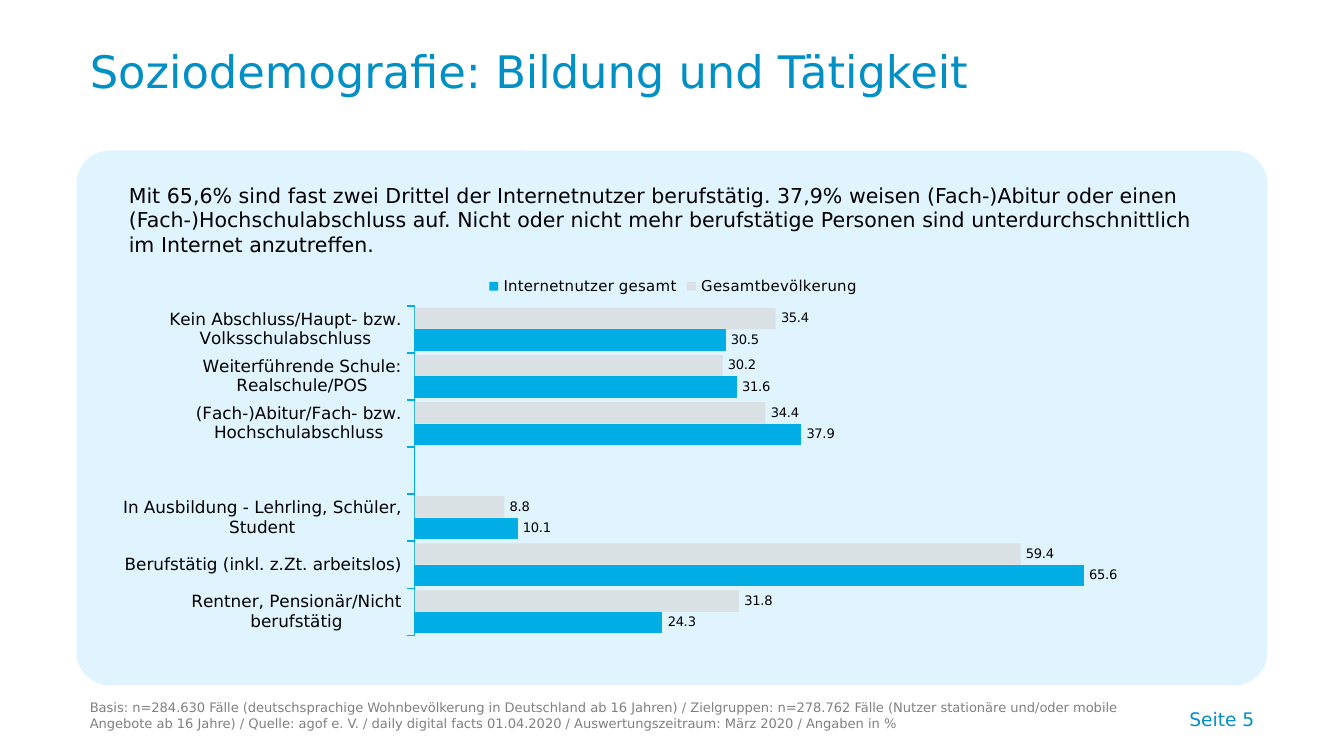
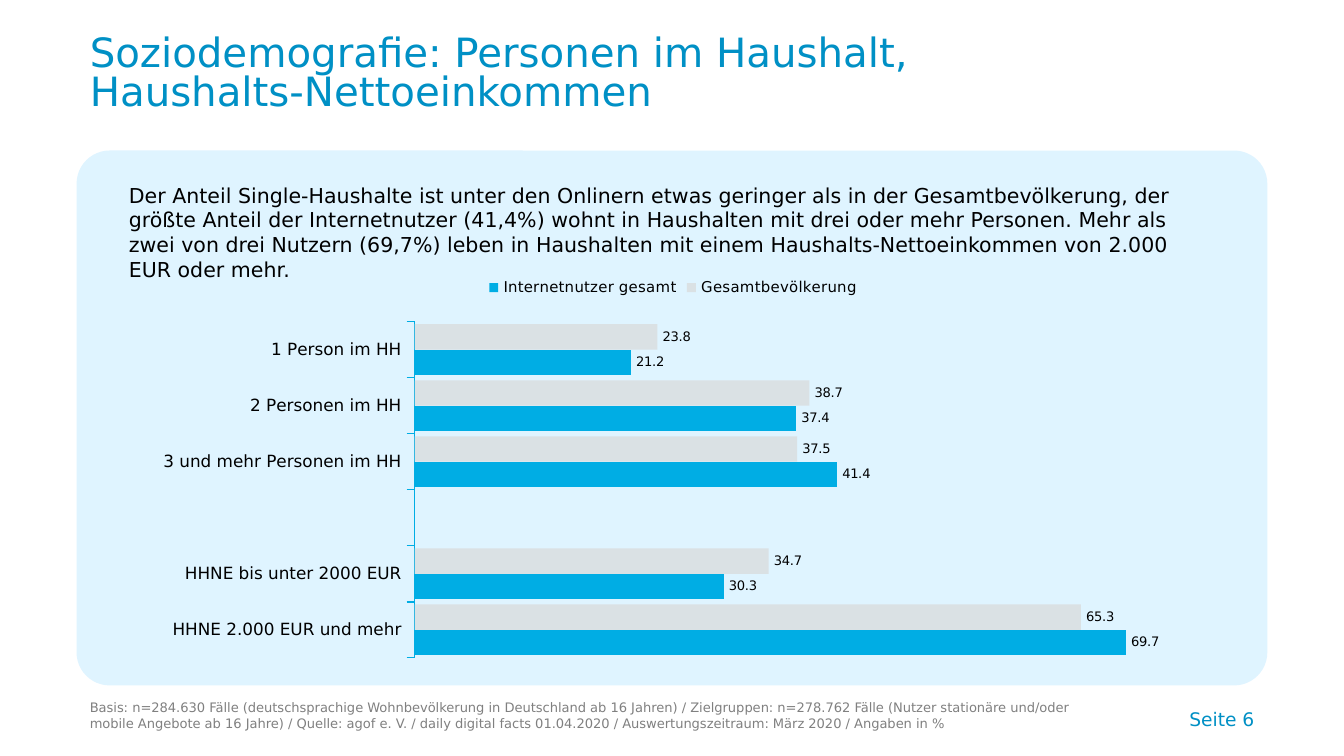
"""Build two slides on the demographics of internet users."""
from dataclasses import dataclass

from lxml.etree import SubElement
from pptx import Presentation
from pptx.chart.data import CategoryChartData
from pptx.dml.color import RGBColor
from pptx.enum.chart import XL_CHART_TYPE, XL_LABEL_POSITION, XL_LEGEND_POSITION, XL_TICK_MARK
from pptx.enum.shapes import MSO_SHAPE
from pptx.enum.text import MSO_ANCHOR, PP_ALIGN
from pptx.oxml import parse_xml
from pptx.oxml.ns import nsdecls, qn
from pptx.util import Inches, Pt


@dataclass(frozen=True)
class Theme:
    font: str = "DejaVu Sans"
    title: RGBColor = RGBColor(0x00, 0x90, 0xC5)
    panel: RGBColor = RGBColor(0xDF, 0xF4, 0xFF)
    ink: RGBColor = RGBColor(0x00, 0x00, 0x00)
    note: RGBColor = RGBColor(0x80, 0x80, 0x80)
    users: RGBColor = RGBColor(0x00, 0xAD, 0xE4)
    people: RGBColor = RGBColor(0xD9, 0xD9, 0xD9)
    body_size: float = 11
    page_size: float = 10
    axis_size: float = 9
    key_size: float = 8
    small_size: float = 7


theme = Theme()
num_fmt = "#,##0.0"
basis = (
    "Basis: n=284.630 Fälle (deutschsprachige Wohnbevölkerung in Deutschland ab 16 Jahren) / "
    "Zielgruppen: n=278.762 Fälle (Nutzer stationäre und/oder mobile Angebote ab 16 Jahre) / "
    "Quelle: agof e. V. / daily digital facts 01.04.2020 / Auswertungszeitraum: März 2020 / Angaben in %"
)
pages = [
    {
        "page": 5,
        "title": "Soziodemografie: Bildung und Tätigkeit",
        "size": 24,
        "body": "Mit 65,6% sind fast zwei Drittel der Internetnutzer berufstätig. 37,9% weisen "
                "(Fach-)Abitur oder einen (Fach-)Hochschulabschluss auf. Nicht oder nicht mehr "
                "berufstätige Personen sind unterdurchschnittlich im Internet anzutreffen.",
        "deep": 0.64,
        "wide": 7.88,
        "top": 1.95,
        "tall": 3.02,
        "plot": (0.268, 0.108, 0.732, 0.812),
        "rows": [
            ("Kein Abschluss/Haupt- bzw. Volksschulabschluss", 35.4, 30.5),
            ("Weiterführende Schule: Realschule/POS", 30.2, 31.6),
            ("(Fach-)Abitur/Fach- bzw. Hochschulabschluss", 34.4, 37.9),
            ("", None, None),
            ("In Ausbildung - Lehrling, Schüler, Student", 8.8, 10.1),
            ("Berufstätig (inkl. z.Zt. arbeitslos)", 59.4, 65.6),
            ("Rentner, Pensionär/Nicht berufstätig", 31.8, 24.3),
        ],
    },
    {
        "page": 6,
        "title": "Soziodemografie: Personen im Haushalt, Haushalts-Nettoeinkommen",
        "size": 21.6,
        "body": "Der Anteil Single-Haushalte ist unter den Onlinern etwas geringer als in der "
                "Gesamtbevölkerung, der größte Anteil der Internetnutzer (41,4%) wohnt in "
                "Haushalten mit drei oder mehr Personen. Mehr als zwei von drei Nutzern (69,7%) "
                "leben in Haushalten mit einem Haushalts-Nettoeinkommen von 2.000 EUR oder mehr.",
        "deep": 3.58,
        "wide": 7.74,
        "top": 1.96,
        "tall": 2.94,
        "plot": (0.268, 0.148, 0.732, 0.852),
        "rows": [
            ("1 Person im HH", 23.8, 21.2),
            ("2 Personen im HH", 38.7, 37.4),
            ("3 und mehr Personen im HH", 37.5, 41.4),
            ("", None, None),
            ("HHNE bis unter 2000 EUR", 34.7, 30.3),
            ("HHNE 2.000 EUR und mehr", 65.3, 69.7),
        ],
    },
]


def add_text(slide, box, text, size, color, anchor=MSO_ANCHOR.TOP, align=PP_ALIGN.LEFT):
    frame = slide.shapes.add_textbox(*map(Inches, box)).text_frame
    frame.word_wrap = True
    frame.vertical_anchor = anchor
    frame.text = text
    para = frame.paragraphs[0]
    para.alignment = align
    font = para.runs[0].font
    font.name, font.size = theme.font, Pt(size)
    font.color.rgb = color
    return para


def add_bars(slide, page):
    names, people, users = zip(*page["rows"])
    data = CategoryChartData(number_format=num_fmt)
    data.categories = names
    data.add_series("Gesamtbevölkerung", people)
    data.add_series("Internetnutzer gesamt", users)
    box = map(Inches, (0.86, page["top"], 8.3, page["tall"]))
    chart = slide.shapes.add_chart(XL_CHART_TYPE.BAR_CLUSTERED, *box, data).chart
    chart.has_title = False
    chart.font.name, chart.font.size = theme.font, Pt(theme.axis_size)
    chart.font.color.rgb = theme.ink

    chart.has_legend = True
    chart.legend.position = XL_LEGEND_POSITION.TOP
    chart.legend.include_in_layout = False
    chart.legend.font.size = Pt(theme.key_size)

    axis = chart.category_axis
    axis.reverse_order = True
    axis.major_tick_mark = XL_TICK_MARK.OUTSIDE
    axis.minor_tick_mark = XL_TICK_MARK.NONE
    axis.tick_labels.number_format = "@"
    axis.format.line.color.rgb = theme.users
    axis.format.line.width = Pt(0.75)
    scale = chart.value_axis
    scale.minimum_scale, scale.maximum_scale = 0, 80
    scale.has_major_gridlines = False
    scale.tick_labels.number_format = num_fmt
    scale.visible = False

    plot = chart.plots[0]
    plot.gap_width, plot.overlap = 20, 0
    plot.vary_by_categories = False
    for series, color in zip(plot.series, (theme.people, theme.users)):
        series.invert_if_negative = False
        series.format.fill.solid()
        series.format.fill.fore_color.rgb = color
        labels = series.data_labels
        labels.show_value = True
        labels.number_format, labels.number_format_is_linked = num_fmt, False
        labels.position = XL_LABEL_POSITION.OUTSIDE_END
        labels.font.size = Pt(theme.small_size)
    tint = next(plot.series[0].format.fill._xPr.iter(qn("a:srgbClr")))
    SubElement(tint, qn("a:alpha"), val="70000")

    area = chart._chartSpace.chart.plotArea
    for old in area.findall(qn("c:layout")):
        area.remove(old)
    layout = parse_xml(f"<c:layout {nsdecls('c')}><c:manualLayout/></c:layout>")
    parts = [("layoutTarget", "inner"), ("xMode", "edge"), ("yMode", "edge")]
    parts += zip("xywh", map(str, page["plot"]))
    for tag, val in parts:
        SubElement(layout[0], qn(f"c:{tag}"), val=val)
    area.insert(0, layout)


deck = Presentation()
deck.slide_width = Inches(10)
deck.slide_height = deck.slide_width * 9 // 16

for page in pages:
    slide = deck.slides.add_slide(deck.slide_layouts[6])
    panel = slide.shapes.add_shape(
        MSO_SHAPE.ROUNDED_RECTANGLE, *map(Inches, (0.57, 1.12, 8.86, 3.98)))
    panel.adjustments[0] = 0.062
    panel.shadow.inherit = False
    panel.fill.solid()
    panel.fill.fore_color.rgb = theme.panel
    panel.line.fill.background()

    add_text(slide, (6.54, 5.1, 2.89, 0.38), f"Seite {page['page']}", theme.page_size,
             theme.title, MSO_ANCHOR.BOTTOM, PP_ALIGN.RIGHT)
    title = add_text(slide, (0.57, 0.28, 7.33, 0.56), page["title"], page["size"],
                     theme.title, MSO_ANCHOR.MIDDLE)
    title.line_spacing = 0.8
    add_text(slide, (0.86, 1.31, 8.28, page["deep"]), page["body"], theme.body_size, theme.ink)
    add_text(slide, (0.57, 5.1, page["wide"], 0.39), basis, theme.small_size,
             theme.note, MSO_ANCHOR.BOTTOM)
    add_bars(slide, page)

deck.save("out.pptx")
